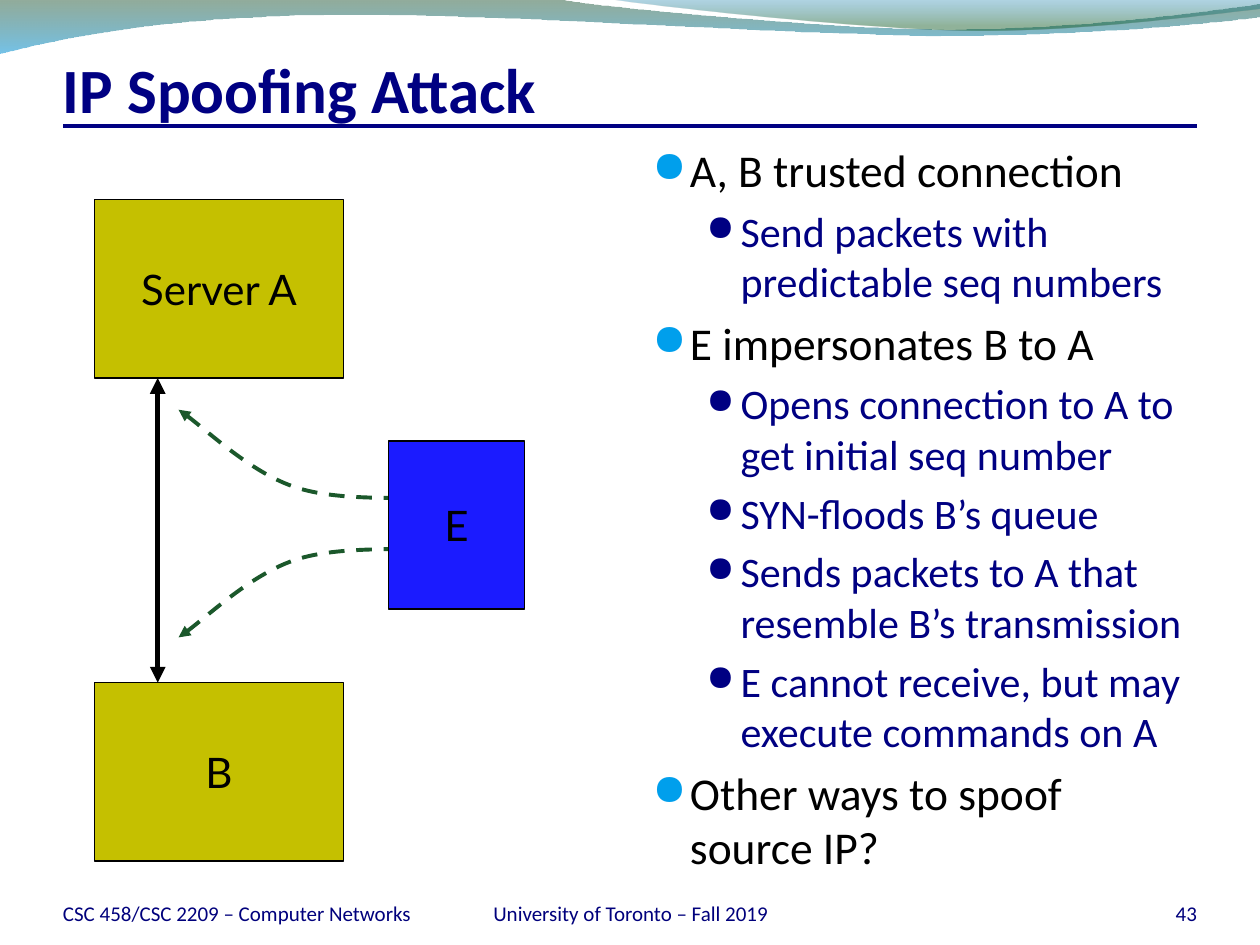
from pptx import Presentation
from pptx.dml.color import RGBColor
from pptx.enum.dml import MSO_LINE
from pptx.enum.shapes import MSO_CONNECTOR, MSO_SHAPE
from pptx.enum.text import MSO_ANCHOR, PP_ALIGN
from pptx.oxml.ns import qn
from pptx.util import Cm, Pt
from lxml.etree import SubElement

NAVY = RGBColor(0x00, 0x00, 0x82)
FOOT = RGBColor(0x00, 0x00, 0x7C)
BLACK = RGBColor(0x00, 0x00, 0x00)
SKY = RGBColor(0x00, 0x9F, 0xEC)
OLIVE = RGBColor(0xC5, 0xC0, 0x00)
BLUE = RGBColor(0x1B, 0x1B, 0xFF)
GREEN = RGBColor(0x1B, 0x58, 0x2B)

# Content; all lengths in cm
TITLE = "IP Spoofing Attack"
POINTS = [
    (0, "A, B trusted connection"),
    (1, "Send packets with predictable seq numbers"),
    (0, "E impersonates B to A"),
    (1, "Opens connection to A to get initial seq number"),
    (1, "SYN-floods B’s queue"),
    (1, "Sends packets to A that resemble B’s transmission"),
    (1, "E cannot receive, but may execute commands on A"),
    (0, "Other ways to spoof source IP?"),
]
# Per level: size, text colour, bullet colour, bullet %, margin, hang
LEVELS = [(26, BLACK, SKY, 95, 0.76, 0.76),
          (24, NAVY, NAVY, 85, 1.78, 0.69)]
FOOTERS = [
    ("CSC 458/CSC 2209 – Computer Networks", 1.27, 7.19, PP_ALIGN.LEFT),
    ("43", 22.02, 2.11, PP_ALIGN.RIGHT),
    ("University of Toronto – Fall 2019", 8.69, 8.05, PP_ALIGN.CENTER),
]
HOSTS = [
    ("Server A", 1.91, 4.02, 5.01, 3.6, OLIVE),
    ("B", 1.91, 13.76, 5.01, 3.6, OLIVE),
    ("E", 7.83, 8.89, 2.75, 3.39, BLUE),
]
# Outlines: a start, then steps of one point (line) or three (curve)
WAVES = [
    ([[(-0.03, -0.03)], [(11.18, -0.03)],
      [(12.09, 0.15), (16.87, 0.58), (19.25, 0.58)],
      [(21.67, 0.58), (24.33, 0.23), (25.4, 0.08)], [(25.43, 0.33)],
      [(24.97, 0.41), (22.1, 0.71), (18.95, 0.71)],
      [(15.8, 0.69), (9.7, 0.25), (6.53, 0.3)],
      [(3.28, 0.33), (1.17, 0.76), (-0.03, 1.07)]],
     [(0, RGBColor(0x0F, 0x46, 0x1E), 45), (1, RGBColor(0x00, 0x90, 0xD6), 55)]),
    ([[(12.17, -0.03)],
      [(12.93, 0.1), (17.32, 0.58), (19.53, 0.61)],
      [(21.74, 0.64), (24.41, 0.28), (25.4, 0.18)], [(25.4, -0.03)]],
     [(0, RGBColor(0x00, 0x76, 0xAF), 30), (0.8, RGBColor(0x0D, 0x58, 0x21), 45)]),
]
SPOOF = [[(3.6, 8.26)],
         [(3.99, 8.51), (5.05, 9.5), (5.89, 9.8)],
         [(6.73, 10.11), (8.05, 10.01), (8.61, 10.06)]]
MIRROR = 21.11  # sum of the heights of the two spoofed paths

deck = Presentation()
deck.slide_width, deck.slide_height = Cm(25.4), Cm(19.05)
slide = deck.slides.add_slide(deck.slide_layouts[6])
shapes = slide.shapes


def outline(steps, close):
    """Draw the points as lines, then join each three into a cubic curve."""
    dots = [(Cm(x), Cm(y)) for step in steps for x, y in step]
    pen = shapes.build_freeform(*dots[0])
    pen.add_line_segments(dots[1:], close=close)
    shape = pen.convert_to_shape()
    shape.shadow.inherit = False
    lines = iter(list(shape._element.spPr.iter(qn("a:lnTo"))))
    for step in steps[1:]:
        group = [next(lines) for _ in step]
        if len(group) == 3:
            curve = SubElement(group[0].getparent(), qn("a:cubicBezTo"))
            group[0].addprevious(curve)
            for line in group:
                curve.append(line[0])
                line.getparent().remove(line)
    return shape


def stroke(line, color, width):
    line.color.rgb = color
    line.width = Pt(width)


def arrow(line, *ends):
    for end in ends:
        SubElement(line._get_or_add_ln(), qn("a:" + end), type="triangle")


def link(x1, y1, x2, y2, color, width):
    line = shapes.add_connector(MSO_CONNECTOR.STRAIGHT, Cm(x1), Cm(y1), Cm(x2), Cm(y2))
    stroke(line.line, color, width)
    SubElement(line._element.spPr, qn("a:effectLst"))
    return line


def style(para, size, color, face="Calibri", bold=False):
    for run in para.runs:
        font = run.font
        font.name, font.size, font.bold = face, Pt(size), bold
        font.color.rgb = color


def label(text, x, y, w, h, top=0):
    frame = shapes.add_textbox(Cm(x), Cm(y), Cm(w), Cm(h)).text_frame
    frame.word_wrap = True
    frame.vertical_anchor = MSO_ANCHOR.BOTTOM
    frame.margin_left = frame.margin_right = frame.margin_bottom = 0
    frame.margin_top = Cm(top)
    frame.text = text
    return frame.paragraphs[0]


def bullet(para, color, size, margin, hang):
    props = para._p.get_or_add_pPr()
    props.set("marL", str(Cm(margin)))
    props.set("indent", str(-Cm(hang)))
    tint = SubElement(props, qn("a:buClr"))
    SubElement(tint, qn("a:srgbClr"), val=str(color))
    SubElement(props, qn("a:buSzPct"), val=str(size * 1000))
    SubElement(props, qn("a:buFont"), typeface="OpenSymbol")
    SubElement(props, qn("a:buChar"), char="●")


# Waves along the top edge
for steps, stops in WAVES:
    wave = outline(steps, True)
    wave.line.fill.background()
    wave.fill.gradient()
    wave.fill.gradient_angle = 270
    for stop, (place, color, alpha) in zip(wave.fill.gradient_stops, stops):
        stop.position = place
        stop.color.rgb = color
    tints = wave._element.spPr.iter(qn("a:srgbClr"))
    for tint, (place, color, alpha) in zip(list(tints), stops):
        SubElement(tint, qn("a:alpha"), val=str(alpha * 1000))

# Title and rule
link(1.27, 2.54, 24.13, 2.54, NAVY, 2.25)
style(label(TITLE, 1.27, 0.84, 22.86, 1.7, 0.13), 36, NAVY, bold=True)

# Bullet list
body = shapes.add_textbox(Cm(12.9), Cm(2.74), Cm(11.23), Cm(14.91)).text_frame
body.word_wrap = True
body.text = "\n".join(text for _, text in POINTS)
for para, (level, _) in zip(body.paragraphs, POINTS):
    size, color, *mark = LEVELS[level]
    para.level = level
    para.space_before = Pt(size * 0.2)
    bullet(para, *mark)
    style(para, size, color)

# Footer
for text, x, w, align in FOOTERS:
    para = label(text, x, 17.65, w, 1.02)
    para.alignment = align
    style(para, 12, FOOT)

# Trusted connection
arrow(link(3.18, 7.62, 3.18, 13.76, BLACK, 3).line, "headEnd", "tailEnd")

# Spoofed paths, the lower one mirrored
lower = [[(x, MIRROR - y) for x, y in step] for step in SPOOF]
for steps in (SPOOF, lower):
    curve = outline(steps, False)
    curve.fill.background()
    stroke(curve.line, GREEN, 2.25)
    curve.line.dash_style = MSO_LINE.DASH
    arrow(curve.line, "headEnd")

# Hosts
for name, x, y, w, h, color in HOSTS:
    box = shapes.add_shape(MSO_SHAPE.RECTANGLE, Cm(x), Cm(y), Cm(w), Cm(h))
    box.shadow.inherit = False
    box.fill.solid()
    box.fill.fore_color.rgb = color
    stroke(box.line, BLACK, 0.75)
    frame = box.text_frame
    frame.word_wrap = False
    frame.vertical_anchor = MSO_ANCHOR.MIDDLE
    frame.text = name
    frame.paragraphs[0].alignment = PP_ALIGN.CENTER
    style(frame.paragraphs[0], 24, BLACK, "Lato")

deck.save("out.pptx")
